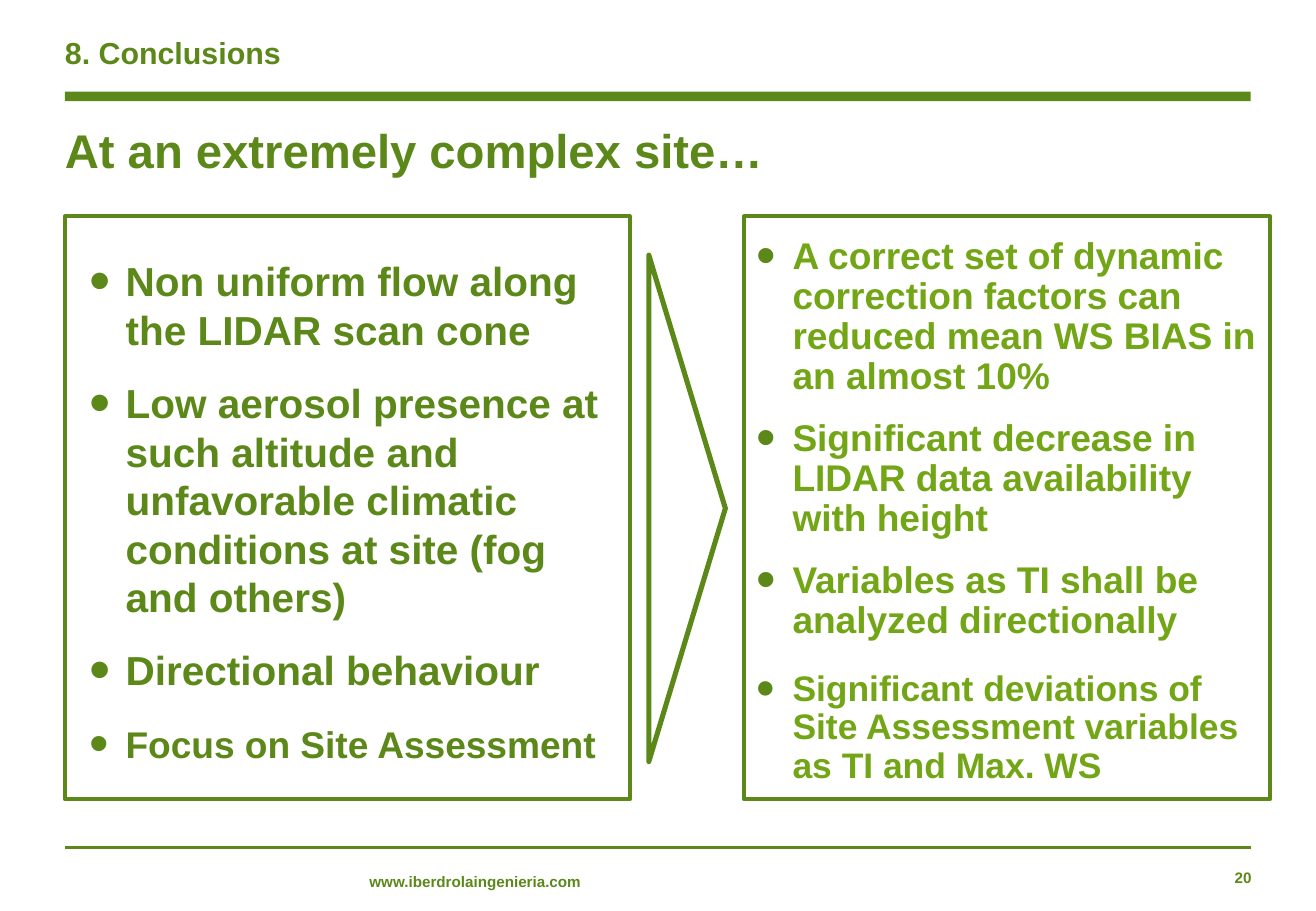
from lxml.etree import SubElement
from pptx import Presentation
from pptx.dml.color import RGBColor
from pptx.enum.shapes import MSO_CONNECTOR, MSO_SHAPE
from pptx.enum.text import MSO_ANCHOR, MSO_AUTO_SIZE, PP_ALIGN
from pptx.oxml.ns import qn
from pptx.util import Inches, Pt

WIDTH, HEIGHT = Inches(10.83), Inches(7.5)
COLORS = {"dark": "5C881A", "light": "73A616"}
LEFT, CONTENT_WIDTH = 4.93, 90.12
PANEL_TOP, PANEL_HEIGHT = 23.75, 64

CONDITIONS = [
    ("Non uniform flow along the LIDAR scan cone", 24, 0),
    ("Low aerosol presence at such altitude and unfavorable climatic "
     "conditions at site (fog and others)", 24, 14.5),
    ("Directional behaviour", 24, 14.5),
    ("Focus on Site Assessment", 22, 16),
]
FINDINGS = [
    ("A correct set of dynamic correction factors can reduced mean WS BIAS "
     "in an almost 10%", 22, 0),
    ("Significant decrease in LIDAR data availability with height", 22, 13),
    ("Variables as TI shall be analyzed directionally", 22, 13),
    ("Significant deviations of Site Assessment variables as TI and Max. WS",
     21, 17.5),
]


def color(name):
    """Return a named colour."""
    return RGBColor.from_string(COLORS[name])


def across(share):
    """Turn a percentage of the slide width into a length."""
    return round(WIDTH * share / 100)


def down(share):
    """Turn a percentage of the slide height into a length."""
    return round(HEIGHT * share / 100)


def area(left, top, width, height):
    """Turn percentages of the slide into a position and size."""
    return across(left), down(top), across(width), down(height)


def apply_format(target, values):
    """Set every attribute named in a dict of format values."""
    for name, value in values.items():
        setattr(target, name, value)


def place(shape, box):
    """Move and size a placeholder."""
    apply_format(shape, dict(zip(("left", "top", "width", "height"), box)))


def format_frame(frame, insets, anchor):
    """Set insets, anchor and wrapping of a text frame."""
    sides = ("margin_left", "margin_top", "margin_right", "margin_bottom")
    apply_format(frame, {side: Inches(inset) for side, inset in zip(sides, insets)})
    apply_format(frame, {"word_wrap": True, "auto_size": MSO_AUTO_SIZE.NONE,
                         "vertical_anchor": anchor})


def write(paragraph, text, size, color_name="dark", **values):
    """Write bold text into a paragraph and format it."""
    apply_format(paragraph, {"alignment": PP_ALIGN.LEFT, "space_before": Pt(0),
                             "space_after": Pt(0), "line_spacing": 1.0, **values})
    run = paragraph.add_run()
    run.text = text
    apply_format(run.font, {"name": "Arial", "size": Pt(size), "bold": True})
    run.font.color.rgb = color(color_name)


def add_bullet(paragraph):
    """Give a paragraph a large round bullet with a hanging indent."""
    properties = paragraph._p.get_or_add_pPr()
    properties.set("marL", str(Inches(0.4)))
    properties.set("indent", str(-Inches(0.3)))
    bullet_color = SubElement(properties, qn("a:buClr"))
    SubElement(bullet_color, qn("a:srgbClr")).set("val", COLORS["dark"])
    SubElement(properties, qn("a:buSzPct")).set("val", "150000")
    SubElement(properties, qn("a:buFont")).set("typeface", "Arial")
    SubElement(properties, qn("a:buChar")).set("char", "•")


def fill_heading(placeholder, box, text, size, **values):
    """Place a one-line heading in a placeholder."""
    place(placeholder, box)
    format_frame(placeholder.text_frame, (0, 0.05, 0.1, 0.05), MSO_ANCHOR.MIDDLE)
    paragraph = placeholder.text_frame.paragraphs[0]
    properties = paragraph._p.get_or_add_pPr()
    properties.set("marL", "0")
    properties.set("indent", "0")
    SubElement(properties, qn("a:buNone"))
    write(paragraph, text, size, **values)


def fill_panel(placeholder, box, items, insets, color_name, line_spacing):
    """Turn a body placeholder into an outlined panel with a bullet list."""
    place(placeholder, box)
    outline(placeholder, 2.25)
    frame = placeholder.text_frame
    format_frame(frame, insets, MSO_ANCHOR.TOP)
    for index, (text, size, gap) in enumerate(items):
        paragraph = frame.add_paragraph() if index else frame.paragraphs[0]
        add_bullet(paragraph)
        write(paragraph, text, size, color_name,
              space_before=Pt(gap), line_spacing=line_spacing)


def outline(shape, width):
    """Give a shape a green outline and no fill."""
    shape.fill.background()
    shape.line.color.rgb = color("dark")
    shape.line.width = Pt(width)


def add_label(slide, box, text, alignment):
    """Add a small footer label."""
    frame = slide.shapes.add_textbox(*box).text_frame
    format_frame(frame, (0, 0, 0, 0), MSO_ANCHOR.TOP)
    write(frame.paragraphs[0], text, 9, alignment=alignment)


def add_header_bar(slide):
    """Add the solid bar under the title."""
    bar = slide.shapes.add_shape(
        MSO_SHAPE.RECTANGLE, *area(LEFT, 10.05, CONTENT_WIDTH, 1.07))
    bar.shadow.inherit = False
    bar.fill.solid()
    bar.fill.fore_color.rgb = color("dark")
    bar.line.fill.background()


def add_footer_line(slide):
    """Add the thin line above the footer."""
    line = slide.shapes.add_connector(
        MSO_CONNECTOR.STRAIGHT, across(LEFT), down(93.03),
        across(LEFT + CONTENT_WIDTH), down(93.03))
    line.line.color.rgb = color("dark")
    line.line.width = Pt(2)
    SubElement(line._element.spPr, qn("a:effectLst"))


def add_pointer(slide):
    """Add the triangle pointing from the left panel to the right one."""
    triangle = slide.shapes.add_shape(
        MSO_SHAPE.ISOSCELES_TRIANGLE, *area(32.96, 51.6, 38.5, 8.4))
    triangle.rotation = 90
    triangle.shadow.inherit = False
    outline(triangle, 3)


def main():
    """Build and save the conclusions slide."""
    presentation = Presentation()
    apply_format(presentation, {"slide_width": WIDTH, "slide_height": HEIGHT})
    slide = presentation.slides.add_slide(
        presentation.slide_layouts.get_by_name("Comparison"))
    title, heading, conditions, spare, findings = slide.placeholders
    spare._element.getparent().remove(spare._element)

    fill_heading(title, area(LEFT, 1.73, CONTENT_WIDTH, 8.4),
                 "8. Conclusions", 18, line_spacing=Pt(20))
    fill_heading(heading, area(LEFT, 12.2, CONTENT_WIDTH, 8.4),
                 "At an extremely complex site…", 28)
    fill_panel(conditions, area(LEFT, PANEL_TOP, 42.94, PANEL_HEIGHT),
               CONDITIONS, (0.1, 0.33, 0.1, 0.05), "dark", 1.0)
    fill_panel(findings, area(56.53, PANEL_TOP, 39.98, PANEL_HEIGHT),
               FINDINGS, (0, 0.17, 0.09, 0.05), "light", 0.9)
    add_pointer(slide)
    add_header_bar(slide)
    add_footer_line(slide)
    add_label(slide, area(28.07, 95.73, 17.91, 2),
              "www.iberdrolaingenieria.com", PP_ALIGN.LEFT)
    add_label(slide, area(84.21, 95.33, 10.9, 2.93), "20", PP_ALIGN.RIGHT)
    presentation.save("out.pptx")


if __name__ == "__main__":
    main()
